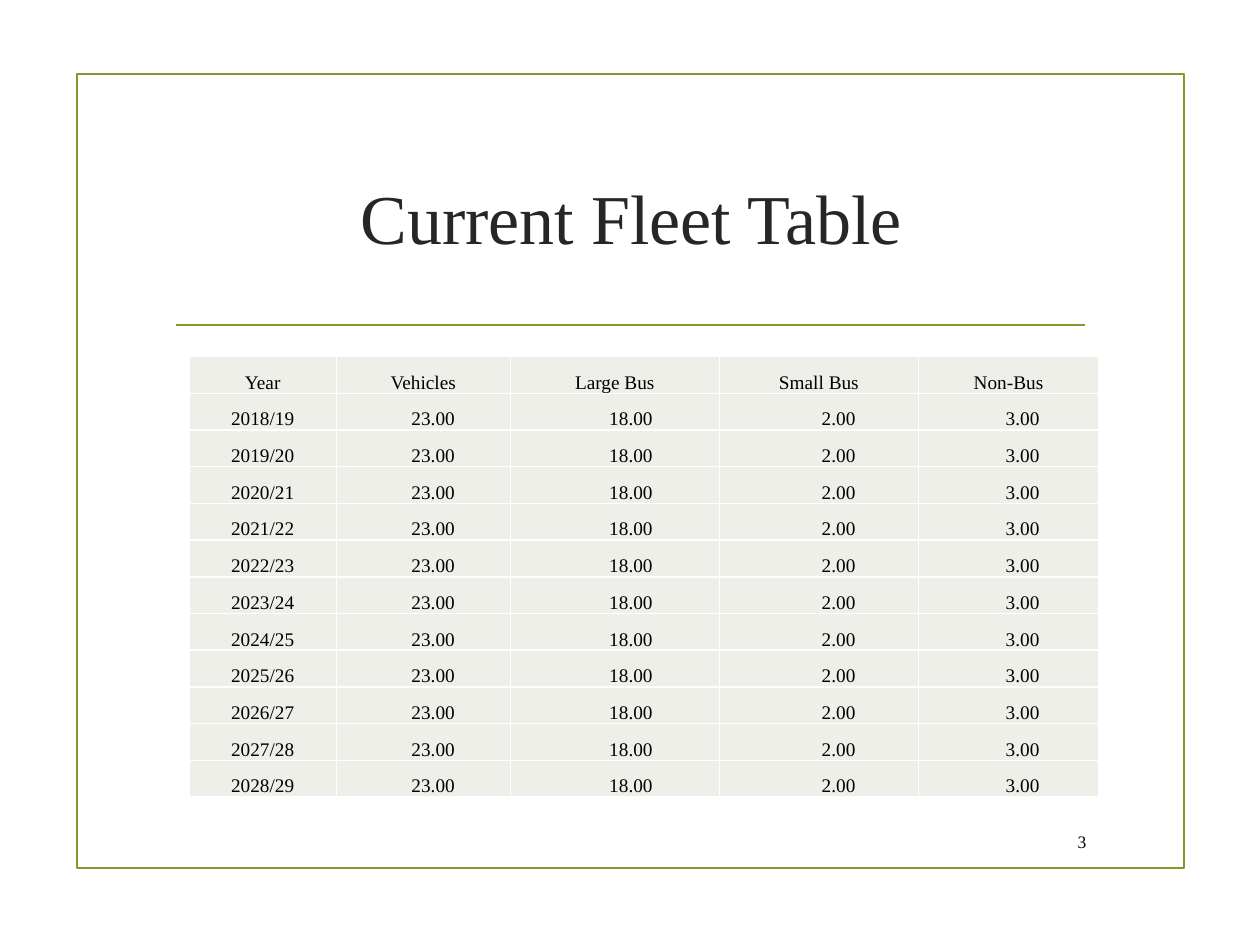
import dataclasses

import pptx
import pptx.dml.color
import pptx.enum.shapes
import pptx.enum.text
import pptx.oxml
import pptx.oxml.ns
import pptx.util

Inches = pptx.util.Inches
Pt = pptx.util.Pt
Align = pptx.enum.text.PP_ALIGN
Anchor = pptx.enum.text.MSO_ANCHOR
ns = pptx.oxml.ns


@dataclasses.dataclass(frozen=True)
class Theme:
    """Colours, type sizes and line widths of the slide."""
    font: str = "Times New Roman"
    green: str = "83992A"
    dark: str = "262626"
    black: str = "000000"
    white: str = "FFFFFF"
    pale: str = "EDEFE8"
    head: float = 40
    body: float = 11
    small: float = 10
    line: float = 1.25
    edge: float = 1


def color(code):
    """Turn a hex code into a colour."""
    return pptx.dml.color.RGBColor.from_string(code)


class Page:
    """Draw styled elements on one slide."""

    def __init__(self, slide, theme):
        """Keep the slide and its style."""
        self.slide = slide
        self.theme = theme

    def label(self, frame, text, size, tone, align):
        """Fill a text frame with one styled paragraph."""
        frame.text = text
        para = frame.paragraphs[0]
        para.alignment = align
        font = para.runs[0].font
        font.name = self.theme.font
        font.size = Pt(size)
        font.color.rgb = color(tone)

    def stroke(self, line):
        """Apply the accent line style."""
        line.color.rgb = color(self.theme.green)
        line.width = Pt(self.theme.line)

    def frame(self, left, top, width, height):
        """Draw the border of the slide."""
        box = self.slide.shapes.add_shape(
            pptx.enum.shapes.MSO_SHAPE.RECTANGLE,
            Inches(left), Inches(top), Inches(width), Inches(height))
        box.shadow.inherit = False
        box.fill.background()
        self.stroke(box.line)

    def rule(self, left, right, top):
        """Draw a level line."""
        line = self.slide.shapes.add_connector(
            pptx.enum.shapes.MSO_CONNECTOR.STRAIGHT,
            Inches(left), Inches(top), Inches(right), Inches(top))
        self.stroke(line.line)
        props = line._element.spPr
        props.append(pptx.oxml.parse_xml(f"<a:effectLst {ns.nsdecls('a')}/>"))

    def title(self, text, left, top, width, height):
        """Place and fill the title."""
        head = self.slide.shapes.title
        head.left, head.top = Inches(left), Inches(top)
        head.width, head.height = Inches(width), Inches(height)
        head.text_frame.auto_size = pptx.enum.text.MSO_AUTO_SIZE.NONE
        head.text_frame.vertical_anchor = Anchor.MIDDLE
        self.label(head.text_frame, text, self.theme.head, self.theme.dark, Align.CENTER)

    def number(self, text, left, top, width, height):
        """Add the page number."""
        box = self.slide.shapes.add_textbox(
            Inches(left), Inches(top), Inches(width), Inches(height))
        box.text_frame.word_wrap = True
        box.text_frame.vertical_anchor = Anchor.MIDDLE
        self.label(box.text_frame, text, self.theme.small, self.theme.black, Align.RIGHT)

    def cell(self, cell, text, align, inset):
        """Style and fill one table cell."""
        cell.margin_left = cell.margin_top = Inches(0.01)
        cell.margin_right, cell.margin_bottom = Inches(inset), 0
        cell.vertical_anchor = Anchor.BOTTOM
        self.label(cell.text_frame, text, self.theme.body, self.theme.black, align)
        props = cell._tc.get_or_add_tcPr()
        for side in ("lnL", "lnR", "lnT", "lnB"):
            props.append(pptx.oxml.parse_xml(
                f'<a:{side} {ns.nsdecls("a")} w="{Pt(self.theme.edge)}"><a:solidFill>'
                f'<a:srgbClr val="{self.theme.white}"/></a:solidFill></a:{side}>'))
        cell.fill.solid()
        cell.fill.fore_color.rgb = color(self.theme.pale)

    def table(self, rows, widths, insets, left, top, height):
        """Draw a table with centred labels and right-aligned figures."""
        grid = self.slide.shapes.add_table(
            len(rows), len(widths), Inches(left), Inches(top),
            Inches(sum(widths)), Inches(height)).table
        for col, width in zip(grid.columns, widths):
            col.width = Inches(width)
        for r, row in enumerate(rows):
            for c, text in enumerate(row):
                figure = r > 0 and c > 0
                self.cell(grid.cell(r, c), text,
                          Align.RIGHT if figure else Align.CENTER,
                          insets[c] if figure else 0.01)


def main():
    """Build the fleet slide."""
    deck = pptx.Presentation()
    deck.slide_width, deck.slide_height = Inches(10), Inches(7.5)
    page = Page(deck.slides.add_slide(deck.slide_layouts[5]), Theme())
    page.frame(0.61, 0.59, 8.79, 6.3)
    page.rule(1.4, 8.61, 2.58)
    page.title("Current Fleet Table", 1.29, 1, 7.44, 1.43)
    page.number("3", 8.29, 6.52, 0.43, 0.31)
    rows = [["Year", "Vehicles", "Large Bus", "Small Bus", "Non-Bus"]]
    for year in range(2018, 2029):
        rows.append([f"{year}/{year % 100 + 1}", "23.00", "18.00", "2.00", "3.00"])
    page.table(rows, [1.17, 1.38, 1.66, 1.58, 1.43],
               [0.01, 0.44, 0.53, 0.5, 0.47], 1.5, 2.83, 3.5)
    deck.save("out.pptx")


if __name__ == "__main__":
    main()
